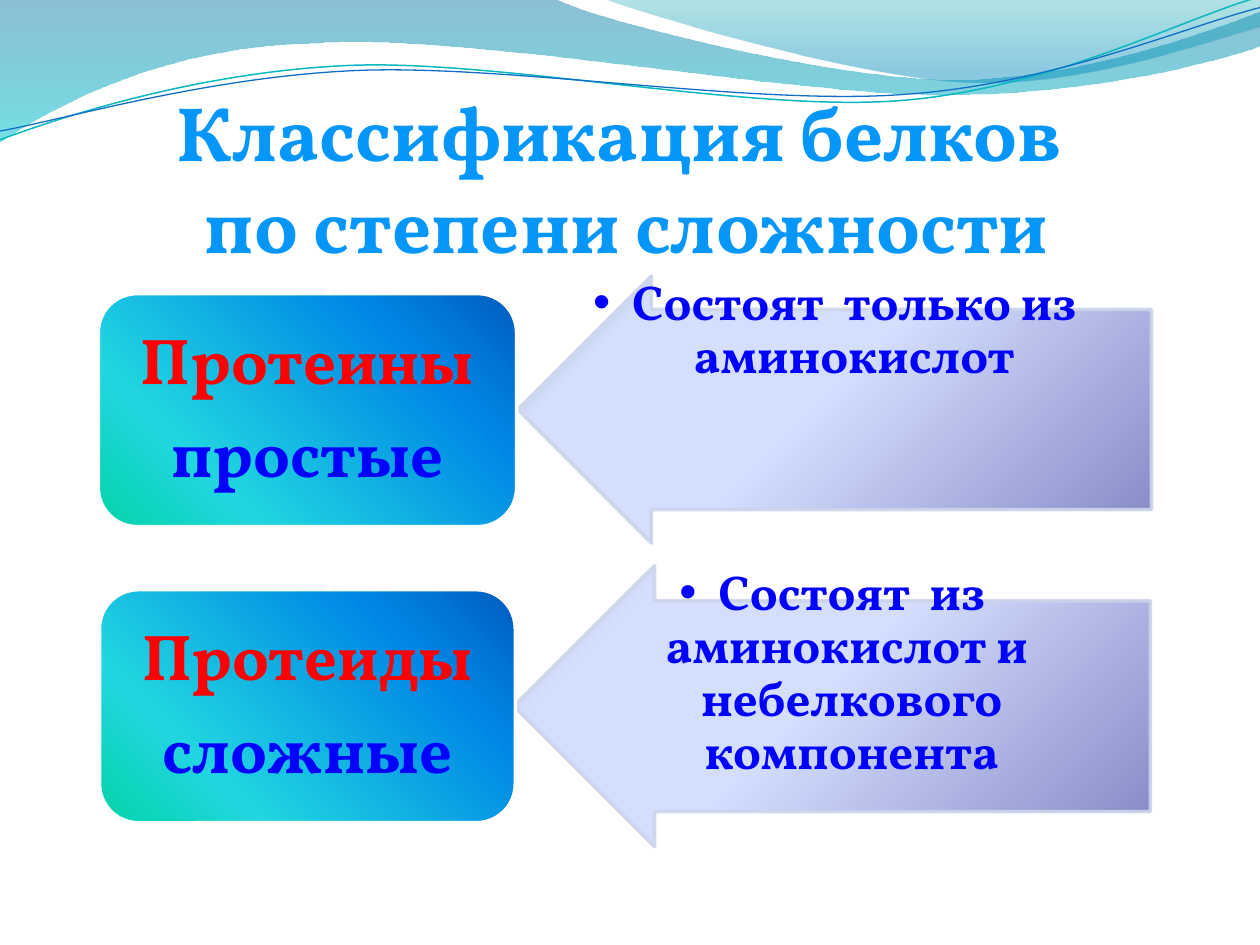
"""Build a slide that classifies proteins by complexity."""
from lxml import etree
from pptx import Presentation, util as u
from pptx.dml.color import RGBColor
from pptx.enum import shapes, text
from pptx.oxml import ns

FONT = "Vollkorn"
SKY = RGBColor(0x04, 0x97, 0xF9)
RED = RGBColor(0xFF, 0x00, 0x00)
BLUE = RGBColor(0x00, 0x00, 0xFF)
WHITE = RGBColor(0xFF, 0xFF, 0xFF)
PALE = RGBColor(0xCC, 0xD5, 0xEA)
TEAL = RGBColor(0x0A, 0xB8, 0xBF)
NAVY = RGBColor(0x0F, 0x6F, 0xC6)

TITLE = "Классификация белков\v по степени сложности"
CLASSES = [
    {"name": "Протеины", "kind": "простые", "about": "Состоят  только из аминокислот",
     "card": (0.78, 2.33, 3.32, 1.85), "arrow": (4.11, 2.19, 5.03, 2.12)},
    {"name": "Протеиды", "kind": "сложные",
     "about": "Состоят  из аминокислот и  небелкового компонента",
     "card": (0.79, 4.68, 3.3, 1.85), "arrow": (4.08, 4.49, 5.05, 2.23)},
]

CARD_STOPS = [(0, "03D4A8", 100), (25, "21D6E0", 100), (75, "0087E6", 100), (100, "005CBF", 100)]
ARROW_STOPS = [(0, "8488C4", 100), (53, "D4DEFF", 100), (83, "D4DEFF", 100), (100, "96AB94", 100)]

WAVES = [
    ([(0, 0), [(4.4, -0.01)], [(4.76, 0.17), (6.64, 0.63), (7.58, 0.63)],
      [(8.53, 0.63), (9.58, 0.26), (10, 0.09)], [(10.01, 0.36)],
      [(9.83, 0.44), (8.7, 0.76), (7.46, 0.75)], [(6.22, 0.75), (3.82, 0.28), (2.57, 0.34)],
      [(1.29, 0.36), (0.46, 0.83), (-0.01, 1.13)], [(0, 0)]],
     [(0, "0074A1", 45), (100, "00C6CF", 55)]),
    ([(4.79, -0.01), [(5.09, 0.11), (6.82, 0.62), (7.69, 0.65)],
      [(8.56, 0.69), (9.61, 0.32), (10, 0.21)], [(10, 0)], [(4.79, -0.01)]],
     [(0, "00A1A9", 30), (80, "008BBF", 45)]),
]
STRANDS = [
    ([(0, 1.11), [(0.48, 0.93), (1.58, 0.57), (2.77, 0.52)],
      [(3.95, 0.47), (5.93, 0.89), (7.13, 0.8)], [(8.33, 0.71), (9.38, 0.15), (9.98, -0.02)]],
     TEAL, 0.85),
    ([(0, 1.04), [(0.47, 0.96), (1.64, 0.61), (2.83, 0.56)],
      [(4.03, 0.51), (5.97, 0.84), (7.17, 0.75)], [(8.36, 0.67), (9.41, 0.21), (10, 0.06)]],
     NAVY, 0.75),
]


def inches(box):
    return [u.Inches(side) for side in box]


def add_curve(slide, outline, close):
    """Draw an outline whose three-point segments are Bezier curves."""
    start, *segments = outline
    builder = slide.shapes.build_freeform(*inches(start))
    builder.add_line_segments([inches(point) for part in segments for point in part], close=close)
    curve = builder.convert_to_shape()
    curve.shadow.inherit = False
    steps = iter(list(curve._element.iter(ns.qn("a:lnTo"))))
    for part in segments:
        corners = [next(steps) for _ in part]
        if len(part) == 3:
            bend = etree.Element(ns.qn("a:cubicBezTo"))
            corners[0].addprevious(bend)
            for corner in corners:
                bend.append(corner[0])
                corner.getparent().remove(corner)
    return curve


def set_gradient(shape, stops, angle):
    shape.fill.background()
    blank = shape._element.spPr.find(ns.qn("a:noFill"))
    gradient = etree.Element(ns.qn("a:gradFill"), rotWithShape="1")
    stop_list = etree.SubElement(gradient, ns.qn("a:gsLst"))
    for position, color, opacity in stops:
        stop = etree.SubElement(stop_list, ns.qn("a:gs"), pos=str(position * 1000))
        tone = etree.SubElement(stop, ns.qn("a:srgbClr"), val=color)
        if opacity < 100:
            etree.SubElement(tone, ns.qn("a:alpha"), val=str(opacity * 1000))
    etree.SubElement(gradient, ns.qn("a:lin"), ang=str(angle * 60000), scaled="0")
    blank.getparent().replace(blank, gradient)


def add_block(slide, preset, box, stops, edge):
    block = slide.shapes.add_shape(preset, *inches(box))
    block.shadow.inherit = False
    set_gradient(block, stops, 315)
    block.line.color.rgb = edge
    block.line.width = u.Pt(2)
    return block


def set_insets(frame, across, down):
    frame.margin_left = frame.margin_right = u.Inches(across)
    frame.margin_top = frame.margin_bottom = u.Inches(down)
    frame.word_wrap = True


def style(paragraph, size, color, spacing=0.9, after=0):
    paragraph.alignment = text.PP_ALIGN.CENTER
    paragraph.line_spacing = spacing
    paragraph.space_before = u.Pt(0)
    paragraph.space_after = u.Pt(after)
    font = paragraph.font
    font.name, font.size, font.bold, font.color.rgb = FONT, u.Pt(size), True, color


def add_arrow(slide, box, about):
    arrow = add_block(slide, shapes.MSO_SHAPE.RIGHT_ARROW, box, ARROW_STOPS, PALE)
    arrow.adjustments[0] = 0.75
    arrow._element.spPr.find(ns.qn("a:xfrm")).set("flipH", "1")
    edge = arrow._element.spPr.find(ns.qn("a:ln")).find(".//" + ns.qn("a:srgbClr"))
    etree.SubElement(edge, ns.qn("a:alpha"), val="90000")
    frame = slide.shapes.add_textbox(*inches(box)).text_frame
    set_insets(frame, 0.02, 0.02)
    note = frame.paragraphs[0]
    note.text = about
    note.level = 1
    style(note, 28, BLUE)
    props = note._p.get_or_add_pPr()
    props.set("marL", str(u.Inches(0.31)))
    props.set("indent", str(-u.Inches(0.31)))
    defaults = props.find(ns.qn("a:defRPr"))
    defaults.addprevious(etree.Element(ns.qn("a:buFont"), typeface="Arial"))
    defaults.addprevious(etree.Element(ns.qn("a:buChar"), char="•"))


def add_card(slide, box, name, kind):
    card = add_block(slide, shapes.MSO_SHAPE.ROUNDED_RECTANGLE, box, CARD_STOPS, WHITE)
    frame = card.text_frame
    set_insets(frame, 0.15, 0.08)
    frame.vertical_anchor = text.MSO_ANCHOR.MIDDLE
    frame.text = f"{name}\n{kind}"
    for line, color in zip(frame.paragraphs, (RED, BLUE)):
        style(line, 37, color, after=13)


def main():
    deck = Presentation()
    deck.slide_width, deck.slide_height = u.Inches(10), u.Inches(7.5)
    slide = deck.slides.add_slide(deck.slide_layouts[5])
    for outline, stops in WAVES:
        wave = add_curve(slide, outline, True)
        set_gradient(wave, stops, 90)
        wave.line.fill.background()
    for outline, color, width in STRANDS:
        strand = add_curve(slide, outline, False)
        strand.fill.background()
        strand.line.color.rgb = color
        strand.line.width = u.Pt(width)
    for protein in CLASSES:
        add_arrow(slide, protein["arrow"], protein["about"])
        add_card(slide, protein["card"], protein["name"], protein["kind"])
    title = slide.shapes.title
    title.left, title.top, title.width, title.height = inches((0.62, 0.62, 8.59, 1.58))
    title.text_frame.text = TITLE
    title.text_frame.auto_size = text.MSO_AUTO_SIZE.NONE
    title.text_frame.vertical_anchor = text.MSO_ANCHOR.TOP
    style(title.text_frame.paragraphs[0], 44, SKY, spacing=1.0)
    slide.shapes._spTree.append(title._element)
    deck.save("out.pptx")


if __name__ == "__main__":
    main()
